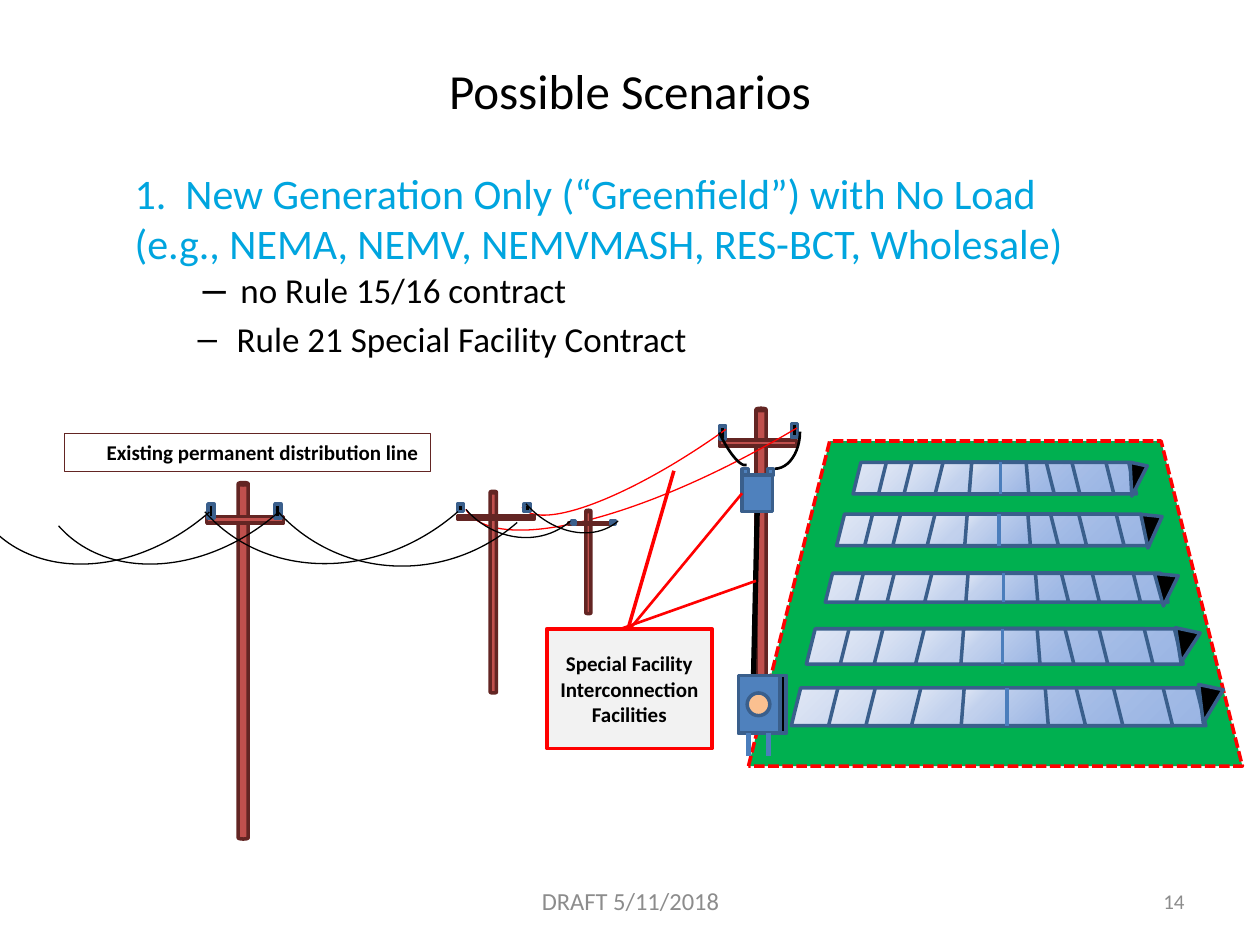
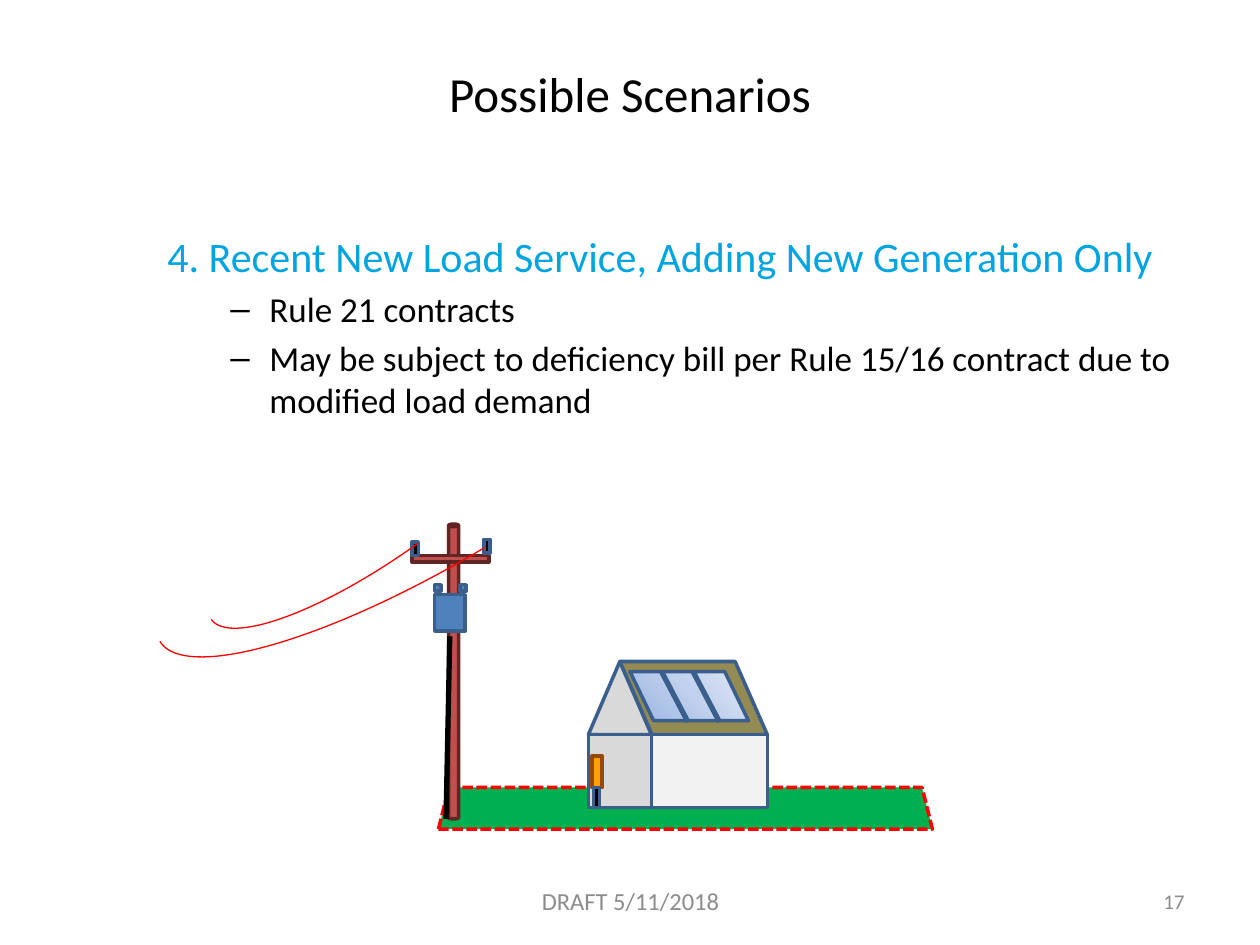
import dataclasses

import pptx
import pptx.dml.color
import pptx.enum.dml
import pptx.enum.shapes
import pptx.enum.text
import pptx.oxml
import pptx.oxml.ns
import pptx.util

KIND = pptx.enum.shapes.MSO_SHAPE
ALIGN = pptx.enum.text.PP_ALIGN
ANCHOR = pptx.enum.text.MSO_ANCHOR
qn = pptx.oxml.ns.qn


@dataclasses.dataclass(frozen=True)
class Theme:
    font: str = "Calibri"
    title_size: int = 28
    heading_size: int = 24
    bullet_size: int = 20
    footer_size: int = 14
    label_size: int = 12
    black: str = "000000"
    heading: str = "00A5DF"
    footer: str = "8C8C8C"
    red: str = "FF0000"
    grass: str = "00B050"
    wood: str = "C0504D"
    bark: str = "632523"
    steel: str = "4F81BD"
    edge: str = "3A5F8C"
    seam: str = "4B7EBC"
    pale: str = "F2F2F2"
    gable: str = "D9D9D9"
    roof: str = "948A54"
    dial: str = "FAC090"
    meter: str = "FFA100"
    rust: str = "984807"
    glass: tuple = ("9AB5E4", "C2D1ED", "E1E8F5")


T = Theme()
deck = pptx.Presentation()
deck.slide_width = pptx.util.Inches(10)
deck.slide_height = pptx.util.Inches(7.5)

# The grid: 10 columns by 7.5 rows
COL = deck.slide_width / 10
ROW = deck.slide_height / 7.5


def draw(slide, kind, at, fill=None, line=T.edge, weight=2, rot=0, flip=None, adj=(), glass=None):
    """Draw a preset shape (left, top, width, height) or, with kind None, a line (x1, y1, x2, y2)."""
    box = [round(v * unit) for v, unit in zip(at, (COL, ROW, COL, ROW))]
    if kind is None:
        part = slide.shapes.add_connector(pptx.enum.shapes.MSO_CONNECTOR.STRAIGHT, *box)
        part._element.spPr.append(pptx.oxml.parse_xml(
            f'<a:effectLst xmlns:a="{pptx.oxml.ns.nsdecls("a").split(chr(34))[1]}"/>'))
    else:
        part = slide.shapes.add_shape(kind, *box)
        part.shadow.inherit = False
        part.rotation = rot
        for i, value in enumerate(adj):
            part.adjustments[i] = value
        if flip:
            part._element.spPr.find(qn("a:xfrm")).set(flip, "1")
        if fill:
            part.fill.solid()
            part.fill.fore_color.rgb = pptx.dml.color.RGBColor.from_string(fill)
        else:
            part.fill.background()
        if glass:
            middle, direction = glass
            stops = "".join(f'<a:gs pos="{pos * 1000}"><a:srgbClr val="{colour}"/></a:gs>'
                            for pos, colour in zip((0, middle, 100), T.glass))
            no_fill = part._element.spPr.find(qn("a:noFill"))
            part._element.spPr.replace(no_fill, pptx.oxml.parse_xml(
                f'<a:gradFill {pptx.oxml.ns.nsdecls("a")} rotWithShape="1">'
                f'<a:gsLst>{stops}</a:gsLst>{direction}</a:gradFill>'))
    part.line.color.rgb = pptx.dml.color.RGBColor.from_string(line)
    part.line.width = pptx.util.Pt(weight)
    return part


def write(frame, paragraphs, anchor=ANCHOR.MIDDLE):
    """Fill a frame; a paragraph is (lines, size, colour, align, bold, bullet)."""
    frame.word_wrap = True
    frame.vertical_anchor = anchor
    for i, (lines, size, colour, align, bold, bullet) in enumerate(paragraphs):
        paragraph = frame.paragraphs[0] if i == 0 else frame.add_paragraph()
        paragraph.alignment = align
        for j, words in enumerate(lines):
            if j:
                paragraph.add_line_break()
            run = paragraph.add_run()
            run.text = words
            run.font.name = T.font
            run.font.size = pptx.util.Pt(size)
            run.font.bold = bold
            run.font.color.rgb = pptx.dml.color.RGBColor.from_string(colour)
        if bullet:
            margin, hang, before, scale = bullet
            paragraph.space_before = pptx.util.Pt(before)
            properties = paragraph._p.get_or_add_pPr()
            properties.set("marL", str(round(margin * COL)))
            properties.set("indent", str(round(-hang * COL)))
            for tag, key, value in (("buSzPct", "val", str(scale * 1000)),
                                    ("buFont", "typeface", "Arial"), ("buChar", "char", "–")):
                properties.append(pptx.oxml.parse_xml(
                    f'<a:{tag} {pptx.oxml.ns.nsdecls("a")} {key}="{value}"/>'))
        elif align == ALIGN.LEFT:
            paragraph.space_before = pptx.util.Pt(0.2 * size)


# What each slide says
BULLET = (0.81, 0.31, 4, 100)
first_dash = (0.84, 0.3, 0, 120)
scenarios = [
    ("14", 0.28, (0.97, 1.28, 8.5, 1.74),
     ["1.  New Generation Only (“Greenfield”) with No Load",
      "(e.g., NEMA, NEMV, NEMVMASH, RES-BCT, Wholesale)"],
     [("no Rule 15/16 contract", first_dash), ("Rule 21 Special Facility Contract", BULLET)]),
    ("17", 0.3, (1.23, 1.78, 8.5, 2),
     ["4. Recent New Load Service, Adding New Generation Only"],
     [("Rule 21 contracts", BULLET),
      ("May be subject to deficiency bill per Rule 15/16 contract due to modified load demand", BULLET)]),
]

# Title, body, footer and number, the same way on every slide
slides = []
for number, title_top, body_at, heading, bullets in scenarios:
    slide = deck.slides.add_slide(deck.slide_layouts[6])
    slides.append(slide)
    body = [(heading, T.heading_size, T.heading, ALIGN.LEFT, False, None)]
    body += [([words], T.bullet_size, T.black, ALIGN.LEFT, False, bullet) for words, bullet in bullets]
    texts = [
        (body_at, body, ANCHOR.TOP),
        ((7.17, 6.95, 2.33, 0.4), [([number], T.label_size, T.footer, ALIGN.RIGHT, False, None)], ANCHOR.MIDDLE),
        ((3.42, 6.95, 3.17, 0.4),
         [(["DRAFT 5/11/2018"], T.footer_size, T.footer, ALIGN.CENTER, False, None)], ANCHOR.MIDDLE),
        ((0.5, title_top, 9, 0.87),
         [(["Possible Scenarios"], T.title_size, T.black, ALIGN.CENTER, False, None)], ANCHOR.MIDDLE),
    ]
    for (left, top, width, height), paragraphs, anchor in texts:
        box = slide.shapes.add_textbox(round(left * COL), round(top * ROW), round(width * COL), round(height * ROW))
        write(box.text_frame, paragraphs, anchor)
greenfield, rooftop = slides

# Land under the generation
for slide, land in ((greenfield, (5.94, 3.5, 3.92, 2.58)), (rooftop, (3.48, 6.25, 3.92, 0.33))):
    site = draw(slide, KIND.TRAPEZOID, land, T.grass, T.red)
    site.line.dash_style = pptx.enum.dml.MSO_LINE.SQUARE_DOT

# Solar rows: nested trapezoids as shares of the row's width, then a centre seam
corner_glow = (72, '<a:path path="circle"><a:fillToRect l="100000" t="100000"/></a:path>')
nested = [(0, 1), (0.09, 0.83), (0.18, 0.62), (0.29, 0.42), (0.41, 0.21)]
solar_rows = [(6.4, 4.99, 2.99, 0.28), (6.55, 4.55, 2.72, 0.23), (6.64, 4.08, 2.48, 0.25),
              (6.77, 3.67, 2.25, 0.25), (6.28, 5.46, 3.29, 0.3)]
for left, top, width, height in solar_rows:
    for start, share in nested:
        draw(greenfield, KIND.TRAPEZOID, (left + start * width, top, share * width, height),
             adj=(0.08,) if start == nested[-1][0] else (), glass=corner_glow)
    seam = left + 0.52 * width
    draw(greenfield, None, (seam, top, seam, top + height), line=T.seam)

# Service poles with arm, insulators, tap lines and riser
service_poles = [
    (greenfield, 6, 3.24, 0.53, 0.81, (6.01, 4.05, 5.98, 5.37),
     [(3.83, 2.61, 3.35, 0.88, 144.4), (3.33, 1.92, 5.17, 1.59, 149.1)]),
    (rooftop, 3.56, 4.16, 0.56, 0.48, (3.57, 5.05, 3.54, 6.5),
     [(1.36, 3.47, 3.37, 0.93, 144.4), (0.9, 3.07, 5.2, 1.37, 149.1)]),
]
transformers = []
for slide, x, y, tank_drop, cap_drop, riser, taps in service_poles:
    draw(slide, KIND.CAN, (x, y, 0.08, 2.34), T.wood, T.bark)
    draw(slide, KIND.RECTANGLE, (x - 0.29, y + 0.25, 0.61, 0.05), T.wood, T.bark, rot=180)
    for dx, dy in ((0.28, 0.12), (-0.29, 0.14)):
        draw(slide, KIND.RECTANGLE, (x + dx, y + dy, 0.05, 0.11), T.black)
    for *tap, turn in taps:
        draw(slide, KIND.ARC, tap, line=T.red, weight=0.75, rot=turn)
    if slide is greenfield:
        draw(slide, KIND.ARC, (5.7, 3.07, 0.18, 0.65), line=T.black, weight=1.5, rot=155.3)
        draw(slide, KIND.ARC, (5.95, 3.13, 0.4, 0.59), line=T.black, weight=1.5, rot=180, flip="flipH")
        cap_drop = tank_drop - 0.05
    draw(slide, None, riser, line=T.black, weight=3)
    tank_top = y + tank_drop
    transformers.append(draw(slide, KIND.RECTANGLE, (x - 0.11, tank_top, 0.24, 0.29), T.steel))
    for dx in (-0.11, 0.09):
        draw(slide, KIND.RECTANGLE, (x + dx, y + cap_drop, 0.05, 0.05), T.steel)

# Shaded ends of the solar rows
for left, top, width, height, turn in [
        (8.94, 3.68, 0.14, 0.26, 192.1), (9.04, 4.09, 0.17, 0.26, 186.2), (9.15, 4.56, 0.19, 0.25, 185.5),
        (9.3, 5, 0.2, 0.26, 192.1), (9.48, 5.45, 0.2, 0.29, 192.1)]:
    draw(greenfield, KIND.ISOSCELES_TRIANGLE, (left, top, width, height), T.black, rot=turn)

# Meter cabinet
draw(greenfield, KIND.RECTANGLE, (5.86, 5.36, 0.33, 0.46), T.steel)
for leg in (5.94, 6.1):
    draw(greenfield, None, (leg, 5.82, leg, 6), line=T.seam, weight=3)
draw(greenfield, KIND.RECTANGLE, (6.19, 5.36, 0.05, 0.46), T.black)
draw(greenfield, KIND.OVAL, (5.93, 5.5, 0.18, 0.18), T.dial)

# Existing line: poles shrink with distance (pole, arm, insulator lefts and size)
for pole, arm, lefts, top, size in [
        ((1.89, 3.83, 0.08, 2.83), (1.64, 4.1, 0.61, 0.05), (2.18, 1.65), 4, (0.05, 0.11)),
        ((3.89, 3.9, 0.05, 1.6), (3.63, 4.09, 0.61, 0.03), (4.16, 3.63), 4, (0.05, 0.06)),
        ((4.65, 4.05, 0.04, 0.82), (4.51, 4.15, 0.35, 0.01), (4.85, 4.54), 4.13, (0.03, 0.03))]:
    draw(greenfield, KIND.CAN, pole, T.wood, T.bark)
    draw(greenfield, KIND.RECTANGLE, arm, T.wood, T.bark, rot=180)
    for left in lefts:
        draw(greenfield, KIND.RECTANGLE, (left, top, *size), T.black)

# Labels
existing_line = draw(greenfield, KIND.RECTANGLE, (0.51, 3.44, 2.91, 0.3), line=T.bark, weight=0.75)
write(existing_line.text_frame,
      [(["Existing permanent distribution line"], T.label_size, T.black, ALIGN.RIGHT, True, None)], ANCHOR.TOP)
facilities = draw(greenfield, KIND.LINE_CALLOUT_1, (4.34, 4.99, 1.31, 0.95), T.pale, T.red,
                  adj=(0.01, 0.49, -1.32, 0.77))
write(facilities.text_frame,
      [(["Special Facility Interconnection Facilities"], T.label_size, T.black, ALIGN.CENTER, True, None)])

# Sagging conductors
for span in [(3.56, 3.06, 1.12, 1.23), (4.06, 3.11, 0.92, 1.17), (1.25, 1.74, 3.02, 2.65),
             (1.85, 1.8, 2.74, 2.68), (0.12, 2.19, 2.77, 2.14), (-0.43, 2.19, 2.77, 2.14)]:
    draw(greenfield, KIND.ARC, span, line=T.black, weight=0.75, rot=138.7)

# Pointers from the callout to the transformer and the riser
to_transformer = draw(greenfield, None, (5, 4.99, 5.89, 3.91), line=T.red, weight=1.5)
to_transformer.end_connect(transformers[0], 1)
draw(greenfield, None, (4.93, 4.99, 6, 4.61), line=T.red, weight=1.5)

# House with rooftop panels and meter
draw(rooftop, KIND.ISOSCELES_TRIANGLE, (4.67, 5.25, 0.5, 0.58), T.gable)
draw(rooftop, KIND.RECTANGLE, (4.67, 5.83, 0.5, 0.58), T.gable)
draw(rooftop, KIND.PARALLELOGRAM, (4.92, 5.25, 1.17, 0.58), T.roof, flip="flipH", adj=(0.44,))
draw(rooftop, KIND.RECTANGLE, (5.17, 5.83, 0.92, 0.58), T.pale)
draw(rooftop, KIND.RECTANGLE, (4.7, 6, 0.08, 0.25), T.meter, T.rust)
draw(rooftop, KIND.FLOWCHART_DATA, (5, 5.33, 0.94, 0.39), flip="flipV",
     glass=(56, '<a:lin ang="2700000" scaled="0"/>'))
for seam in (5.25, 5.5):
    draw(rooftop, None, (seam, 5.33, seam + 0.21, 5.73), line=T.edge, weight=3)
draw(rooftop, KIND.RECTANGLE, (4.71, 6.25, 0.05, 0.16), T.black)

deck.save("out.pptx")
